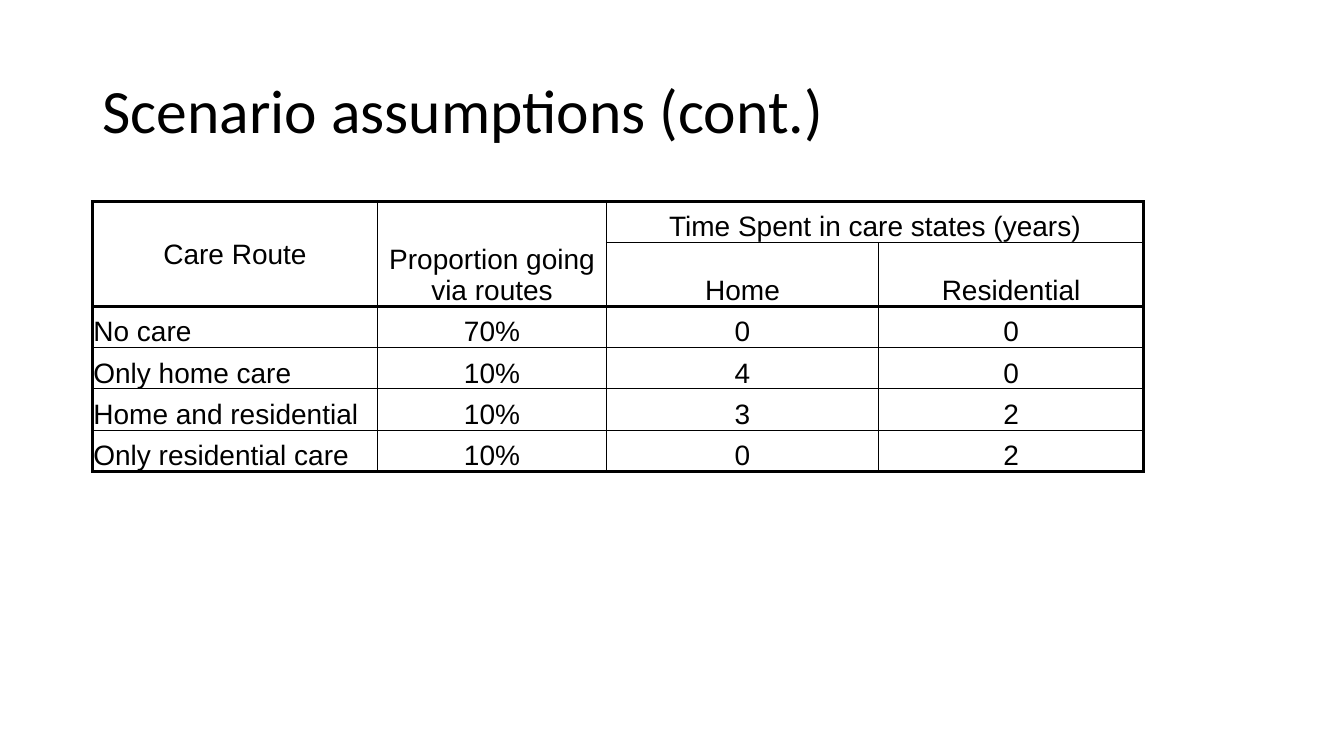
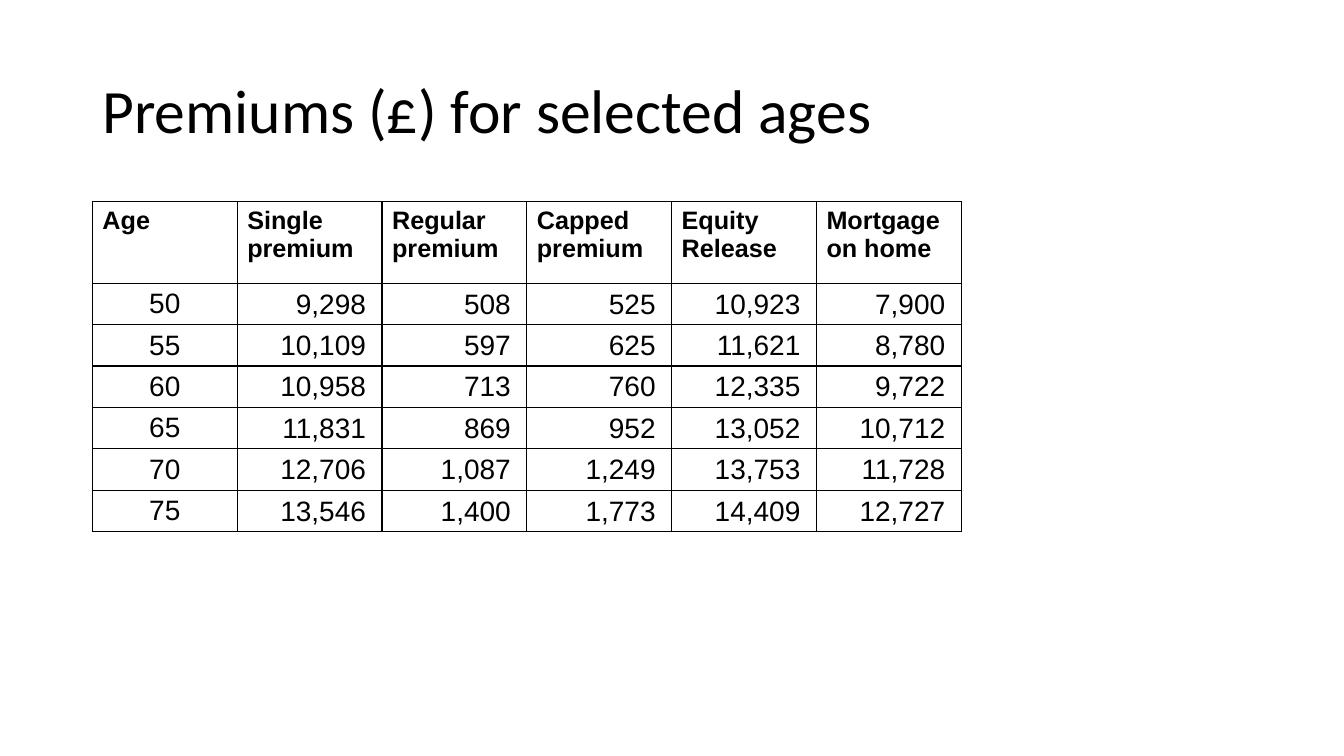
from lxml.etree import SubElement
from pptx import Presentation
from pptx.dml.color import RGBColor
from pptx.enum.text import MSO_ANCHOR, PP_ALIGN
from pptx.oxml.ns import qn
from pptx.util import Pt

BLACK = "000000"
WHITE = "FFFFFF"
THIN, THICK = 1, 2.25
LEFT, TABLE_TOP, ROW_HEIGHT = 66, 144, 29.5
TIGHT = (0.7, 0.7, 0.7, 0)
NUMBER = (0.7, 0.7, 11.4, 0)
NORMAL = (7.2, 3.6, 7.2, 3.6)


def write_text(target, text, size=20, font="Arial", bold=False,
               align=PP_ALIGN.LEFT, spacing=None):
    paragraph = target.text_frame.paragraphs[0]
    paragraph.alignment = align
    paragraph.line_spacing = spacing
    run = paragraph.add_run()
    run.text = text
    run.font.size = Pt(size)
    run.font.name = font
    run.font.bold = bold
    run.font.color.rgb = RGBColor.from_string(BLACK)


def style_cell(cell, borders, margins, anchor):
    properties = cell._tc.get_or_add_tcPr()
    for side, width in zip("LRTB", borders):
        line = SubElement(properties, qn(f"a:ln{side}"), w=str(Pt(width)))
        fill = SubElement(line, qn("a:solidFill"))
        SubElement(fill, qn("a:srgbClr"), val=BLACK)
    cell.fill.solid()
    cell.fill.fore_color.rgb = RGBColor.from_string(WHITE)
    cell.margin_left, cell.margin_top, cell.margin_right, cell.margin_bottom = map(Pt, margins)
    cell.vertical_anchor = anchor


presentation = Presentation()
presentation.slide_width = Pt(960)
presentation.slide_height = Pt(540)

care_rows = [
    ["Care Route", "Proportion going via routes", "Time Spent in care states (years)", ""],
    ["", "", "Home", "Residential"],
    ["No care", "70%", "0", "0"],
    ["Only home care", "10%", "4", "0"],
    ["Home and residential", "10%", "3", "2"],
    ["Only residential care", "10%", "0", "2"],
]
premium_rows = [
    ["Age", "Single premium", "Regular premium", "Capped premium",
     "Equity Release", "Mortgage on home"],
    ["50", "9,298", "508", "525", "10,923", "7,900"],
    ["55", "10,109", "597", "625", "11,621", "8,780"],
    ["60", "10,958", "713", "760", "12,335", "9,722"],
    ["65", "11,831", "869", "952", "13,052", "10,712"],
    ["70", "12,706", "1,087", "1,249", "13,753", "11,728"],
    ["75", "13,546", "1,400", "1,773", "14,409", "12,727"],
]
pages = [
    ("Scenario assumptions (cont.)", care_rows, [203.8, 163.4, 194.4, 189.4], ROW_HEIGHT),
    ("Premiums (£) for selected ages", premium_rows, [103.45] * 6, 58.4),
]

tables = []
for title_text, rows, widths, first_height in pages:
    slide = presentation.slides.add_slide(presentation.slide_layouts[5])
    title = slide.shapes.title
    title.left, title.top, title.width, title.height = Pt(LEFT), Pt(28.75), Pt(828), Pt(104.4)
    title.text_frame.vertical_anchor = MSO_ANCHOR.MIDDLE
    write_text(title, title_text, size=44, font="Calibri", spacing=0.9)

    heights = [first_height] + [ROW_HEIGHT] * (len(rows) - 1)
    table = slide.shapes.add_table(
        len(rows), len(widths), Pt(LEFT), Pt(TABLE_TOP), Pt(sum(widths)), Pt(sum(heights))
    ).table
    table.first_row = False
    table.horz_banding = False
    for column, width in zip(table.columns, widths):
        column.width = Pt(width)
    for row, height in zip(table.rows, heights):
        row.height = Pt(height)
    tables.append(table)

care_table, premium_table = tables

for first, last in [((0, 0), (1, 0)), ((0, 1), (1, 1)), ((0, 2), (0, 3))]:
    care_table.cell(*first).merge(care_table.cell(*last))

thick_rows = {0, 2, len(care_rows)}
thick_columns = {0, len(care_rows[0])}
for row_index, row in enumerate(care_rows):
    for column_index, text in enumerate(row):
        cell = care_table.cell(row_index, column_index)
        right = column_index + (cell.span_width if cell.is_merge_origin else 1)
        bottom = row_index + (cell.span_height if cell.is_merge_origin else 1)
        borders = [THICK if edge in thick_columns else THIN for edge in (column_index, right)]
        borders += [THICK if edge in thick_rows else THIN for edge in (row_index, bottom)]
        corner = row_index == column_index == 0
        style_cell(cell, borders, TIGHT, MSO_ANCHOR.MIDDLE if corner else MSO_ANCHOR.BOTTOM)
        if text:
            route_name = column_index == 0 and row_index > 1
            write_text(cell, text, align=PP_ALIGN.LEFT if route_name else PP_ALIGN.CENTER)

for row_index, row in enumerate(premium_rows):
    for column_index, text in enumerate(row):
        cell = premium_table.cell(row_index, column_index)
        if row_index == 0:
            style_cell(cell, [THIN] * 4, NORMAL, MSO_ANCHOR.TOP)
            write_text(cell, text, size=18, bold=True)
        elif column_index == 0:
            style_cell(cell, [THIN] * 4, NORMAL, MSO_ANCHOR.MIDDLE)
            write_text(cell, text, align=PP_ALIGN.CENTER)
        else:
            style_cell(cell, [THIN] * 4, NUMBER, MSO_ANCHOR.MIDDLE)
            write_text(cell, text, align=PP_ALIGN.RIGHT)

presentation.save("out.pptx")
